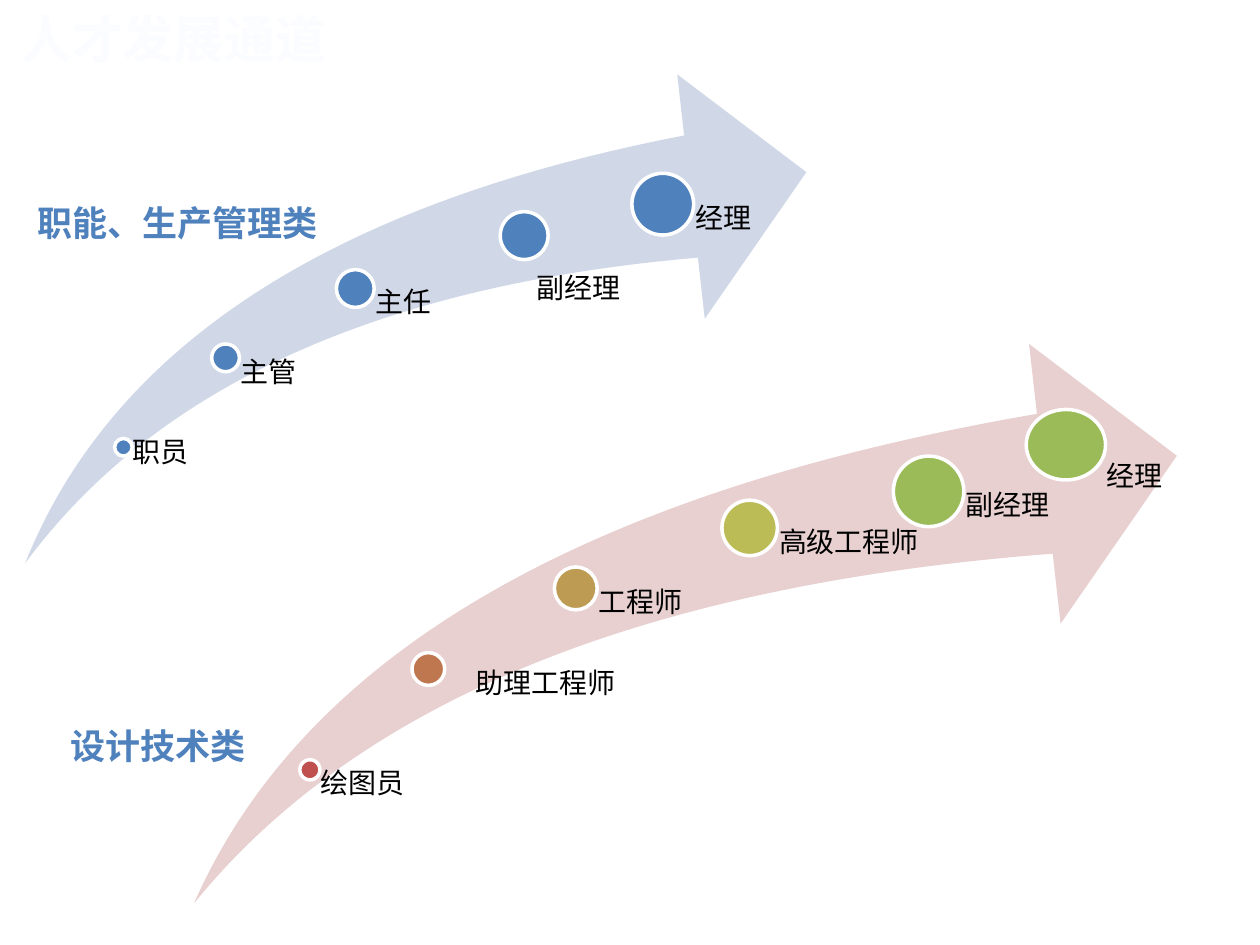
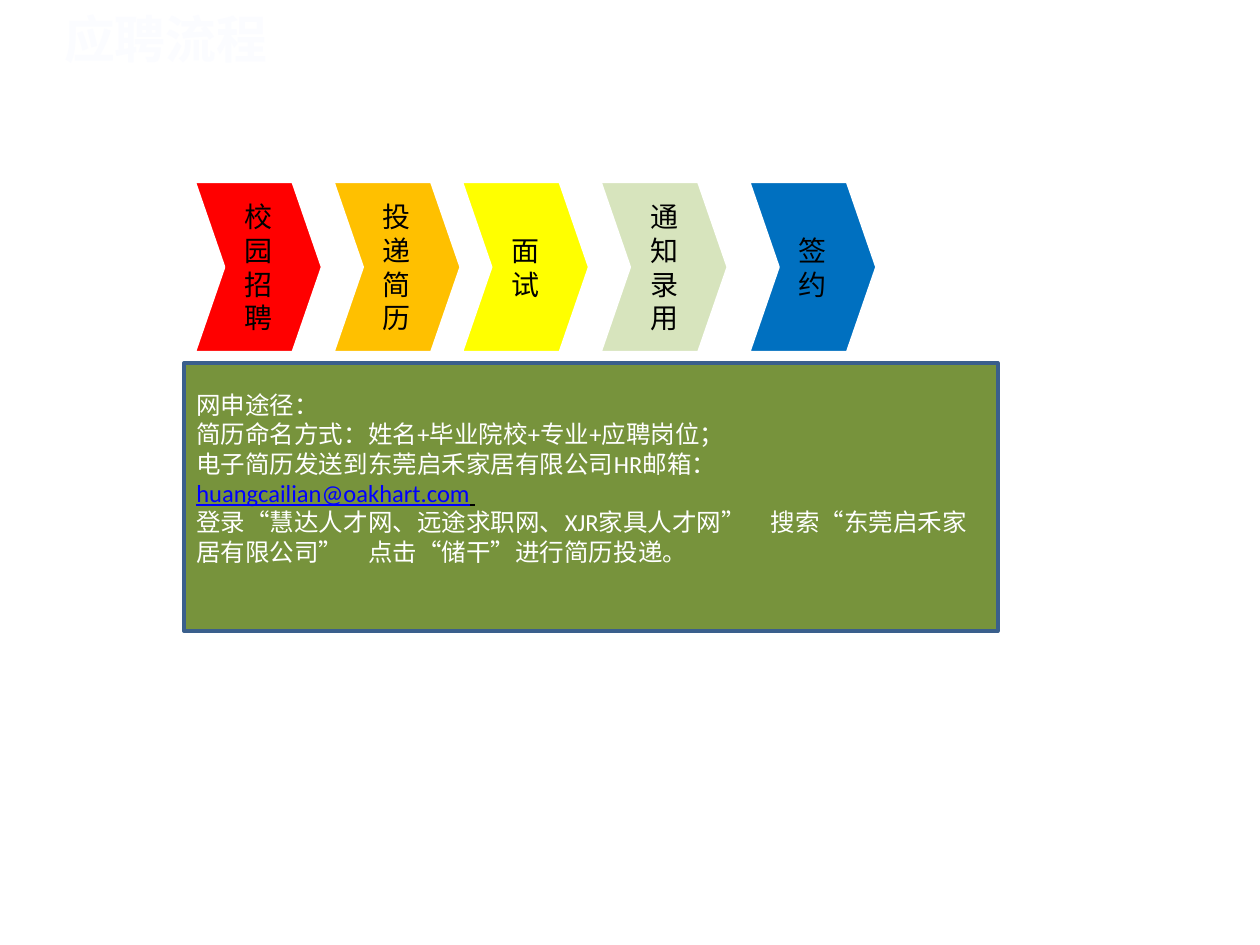
"""Build two recruitment slides: career paths and the application process."""
from pptx import Presentation
from pptx.dml.color import RGBColor
from pptx.enum.shapes import MSO_SHAPE
from pptx.enum.text import MSO_ANCHOR, MSO_AUTO_SIZE, PP_ALIGN
from pptx.util import Inches, Pt

LEFT, CENTER = PP_ALIGN.LEFT, PP_ALIGN.CENTER
TOP, MIDDLE = MSO_ANCHOR.TOP, MSO_ANCHOR.MIDDLE
SWOOSH, OVAL = MSO_SHAPE.SWOOSH_ARROW, MSO_SHAPE.OVAL
CHEVRON, RECTANGLE = MSO_SHAPE.CHEVRON, MSO_SHAPE.RECTANGLE

FONT = "Calibri"
WHITE, BLACK, BLUE, GREEN = "FFFFFF", "000000", "4F81BD", "9BBB59"
TITLE_COLOR, LINK_COLOR = "FBFCFF", "0000FF"
SLIDE_SIZE = (10, 7.5)
PADDING = (0.1, 0.05, 0.1, 0.05)

# Stage: name, dot centre x and y, dot width and height, colour, label nudge x and y.
CAREER_PATHS = [
    {
        "name": "职能、生产管理类", "name_at": (0.03, 1.55, 2.76, 0.44),
        "arrow_at": (0.2, 0.59, 6.2, 3.88), "arrow_color": "D0D8E8",
        "stages": [
            ("职员", 0.98, 3.55, 0.14, 0.14, BLUE, 0, -0.07),
            ("主管", 1.79, 2.84, 0.22, 0.22, BLUE, 0, 0),
            ("主任", 2.82, 2.29, 0.3, 0.3, BLUE, 0, 0),
            ("副经理", 4.16, 1.87, 0.38, 0.38, BLUE, -0.1, 0.31),
            ("经理", 5.26, 1.62, 0.49, 0.49, BLUE, 0, 0),
        ],
    },
    {
        "name": "设计技术类", "name_at": (0.31, 5.7, 1.89, 0.44),
        "arrow_at": (1.54, 2.73, 7.8, 4.44), "arrow_color": "E8D0D0",
        "stages": [
            ("绘图员", 2.46, 6.11, 0.16, 0.16, "C0504D", 0, 0),
            ("助理工程师", 3.4, 5.31, 0.26, 0.26, "BF7750", 0.24, 0),
            ("工程师", 4.57, 4.67, 0.34, 0.34, "BD9B53", 0, 0),
            ("高级工程师", 5.95, 4.19, 0.44, 0.44, "BCBC56", 0, 0),
            ("副经理", 7.37, 3.9, 0.56, 0.56, GREEN, 0, 0),
            ("经理", 8.46, 3.53, 0.63, 0.56, GREEN, -0.01, 0.14),
        ],
    },
]

STEPS = [
    ("校园招聘", 1.54, "FF0000"),
    ("投递简历", 2.64, "FFC000"),
    ("面试", 3.66, "FFFF00"),
    ("通知录用", 4.76, "D7E4BD"),
    ("签约", 5.94, "0070C0"),
]
STEP_TOP, STEP_WIDTH, STEP_HEIGHT = 1.44, 1.02, 1.36

GUIDE_AT = (1.46, 2.88, 6.46, 2.13)
GUIDE = [
    ["网申途径："],
    ["简历命名方式：姓名+毕业院校+专业+应聘岗位；"],
    ["电子简历发送到东莞启禾家居有限公司HR邮箱：",
     ("huangcailian@oakhart.com", LINK_COLOR), (" ", BLACK)],
    ["登录“慧达人才网、远途求职网、XJR家具人才网”　搜索“东莞启禾家居有限公司”　"
     "点击“储干”进行简历投递。"],
]


def color(value):
    """Turn a hex string into a colour."""
    return RGBColor.from_string(value)


def write(box, paragraphs, size=16, ink=BLACK, bold=False, align=LEFT,
          anchor=TOP, padding=PADDING, spacing=None):
    """Fill a box with a string, or with paragraphs of plain or coloured, underlined spans."""
    if isinstance(paragraphs, str):
        paragraphs = [[paragraphs]]
    frame = box.text_frame
    frame.word_wrap = True
    frame.auto_size = MSO_AUTO_SIZE.NONE
    frame.vertical_anchor = anchor
    (frame.margin_left, frame.margin_top,
     frame.margin_right, frame.margin_bottom) = map(Inches, padding)
    for index, spans in enumerate(paragraphs):
        para = frame.add_paragraph() if index else frame.paragraphs[0]
        para.alignment = align
        para.line_spacing = spacing
        for item in spans:
            marked = isinstance(item, tuple)
            text, span_ink = item if marked else (item, ink)
            span = para.add_run()
            span.text = text
            span.font.name = FONT
            span.font.size = Pt(size)
            span.font.bold = bold
            span.font.underline = marked
            span.font.color.rgb = color(span_ink)


def add_shape(page, kind, place, fill, line=None, adjustments=()):
    """Add a flat preset shape at (left, top, width, height) in inches."""
    shape = page.shapes.add_shape(kind, *map(Inches, place))
    shape.shadow.inherit = False
    shape.fill.solid()
    shape.fill.fore_color.rgb = color(fill)
    if line:
        shape.line.color.rgb = color(line)
        shape.line.width = Pt(2)
    else:
        shape.line.fill.background()
    for index, value in enumerate(adjustments):
        shape.adjustments[index] = value
    return shape


def add_text(page, place, text, **style):
    """Add a text box at (left, top, width, height) in inches."""
    write(page.shapes.add_textbox(*map(Inches, place)), text, **style)


def add_page(deck, title, left):
    """Add a title-only slide with the shared title style."""
    page = deck.slides.add_slide(deck.slide_layouts[5])
    box = page.shapes.title
    box.left, box.top, box.width, box.height = map(Inches, (left, 0, 6, 0.6))
    write(box, title, size=29, ink=TITLE_COLOR, bold=True, anchor=MIDDLE)
    return page


def add_career_path(page, path):
    """Draw a swoosh arrow with its growing dots and their labels."""
    add_shape(page, SWOOSH, path["arrow_at"], path["arrow_color"], adjustments=(0.25, 0.25))
    for name, x, y, width, height, fill, shift_x, shift_y in path["stages"]:
        add_shape(page, OVAL, (x - width / 2, y - height / 2, width, height), fill, line=WHITE)
        label_at = (x + width * 0.53 + shift_x, y + shift_y, 1.4, 0.35)
        add_text(page, label_at, name, padding=(0, 0, 0, 0), spacing=0.9)
    add_text(page, path["name_at"], path["name"], size=20, ink=BLUE, bold=True, align=CENTER)


def main():
    """Build and save the deck."""
    deck = Presentation()
    deck.slide_width, deck.slide_height = map(Inches, SLIDE_SIZE)

    page = add_page(deck, "人才发展通道", 0.07)
    for path in CAREER_PATHS:
        add_career_path(page, path)

    page = add_page(deck, "应聘流程", 0.41)
    for name, left, fill in STEPS:
        place = (left, STEP_TOP, STEP_WIDTH, STEP_HEIGHT)
        step = add_shape(page, CHEVRON, place, fill, line=WHITE, adjustments=(0.23,))
        write(step, name, align=CENTER, anchor=MIDDLE)
    guide = add_shape(page, RECTANGLE, GUIDE_AT, "77933C", line="3A5F8C")
    write(guide, GUIDE, size=14, ink=WHITE, anchor=MIDDLE, padding=(0.1, 0.05, 0.1, 0.35))

    deck.save("out.pptx")


if __name__ == "__main__":
    main()
